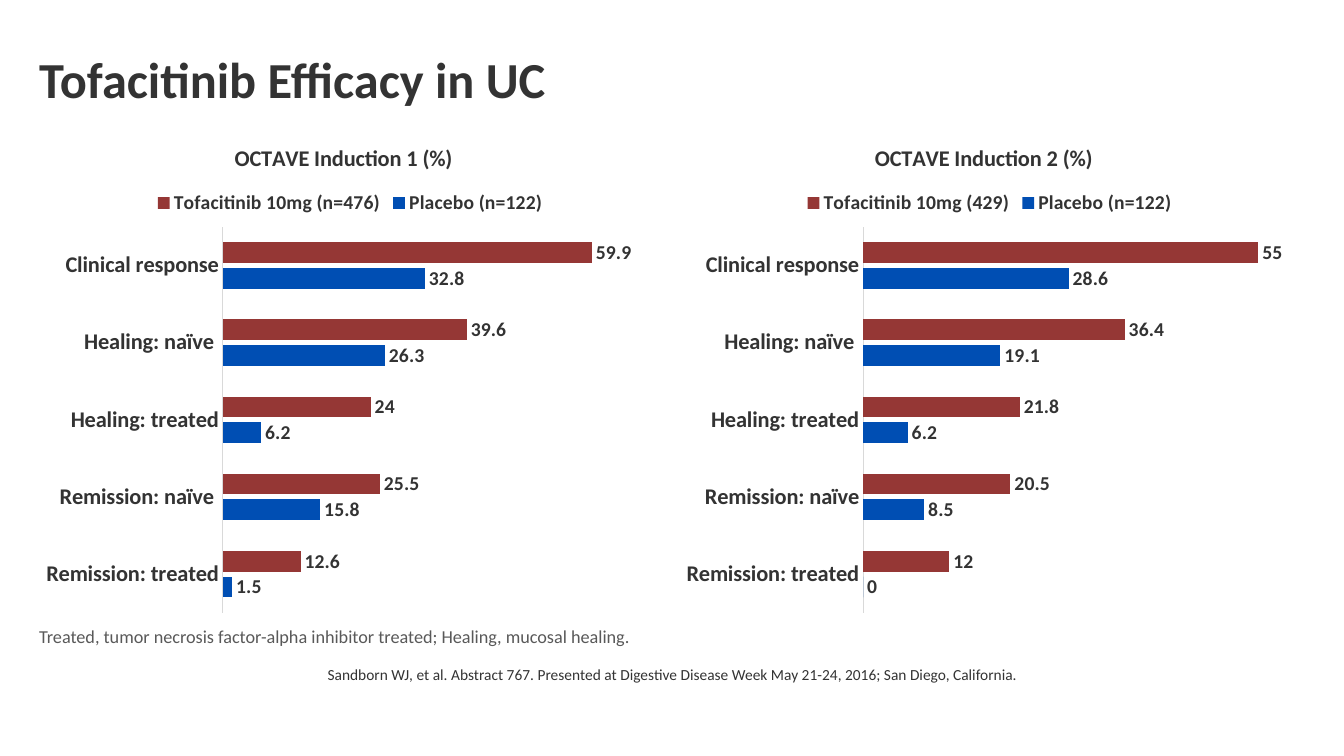
from pptx import Presentation
from pptx.chart.data import CategoryChartData
from pptx.dml.color import RGBColor
from pptx.enum.chart import XL_CHART_TYPE, XL_LABEL_POSITION, XL_LEGEND_POSITION, XL_TICK_MARK
from pptx.enum.text import MSO_ANCHOR
from pptx.oxml import parse_xml
from pptx.oxml.ns import nsdecls
from pptx.util import Inches, Pt

BAR_CLUSTERED = XL_CHART_TYPE.BAR_CLUSTERED
OUTSIDE_END = XL_LABEL_POSITION.OUTSIDE_END
LEGEND_TOP = XL_LEGEND_POSITION.TOP
NO_TICK = XL_TICK_MARK.NONE
TOP, MIDDLE = MSO_ANCHOR.TOP, MSO_ANCHOR.MIDDLE

FONT = "Calibri"
COLORS = {
    "ink": "333333",
    "note": "595959",
    "axis": "D9D9D9",
    "placebo": "004EB3",
    "tofacitinib": "953735",
}
MARGIN, CONTENT_WIDTH = 0.29, 12.78
CHART_LEFT, CHART_TOP, CHART_STEP = 0.34, 1.18, 6.35
CHART_WIDTH, CHART_HEIGHT = 6.28, 5

TRIALS = [
    {
        "title": "OCTAVE Induction 1 (%)",
        "outcomes": ["Remission: treated", "Remission: naïve ", "Healing: treated",
                     "Healing: naïve ", "Clinical response"],
        "arms": [
            ("placebo", "Placebo (n=122)", [1.5, 15.8, 6.2, 26.3, 32.8]),
            ("tofacitinib", "Tofacitinib 10mg (n=476)", [12.6, 25.5, 24, 39.6, 59.9]),
        ],
        "maximum": 70,
        "legend_left": 0.185,
    },
    {
        "title": "OCTAVE Induction 2 (%)",
        "outcomes": ["Remission: treated", "Remission: naïve", "Healing: treated",
                     "Healing: naïve ", "Clinical response"],
        "arms": [
            ("placebo", "Placebo (n=122)", [0, 8.5, 6.2, 19.1, 28.6]),
            ("tofacitinib", "Tofacitinib 10mg (429)", [12, 20.5, 21.8, 36.4, 55]),
        ],
        "maximum": 60,
        "legend_left": 0.2,
    },
]


def rgb(role):
    return RGBColor.from_string(COLORS[role])


def style_font(font, size, role="ink", bold=True):
    font.name = FONT
    font.size = Pt(size)
    font.bold = bold
    font.color.rgb = rgb(role)


def add_text(slide, box, words, size, role="ink", bold=False, anchor=TOP):
    frame = slide.shapes.add_textbox(*map(Inches, box)).text_frame
    frame.word_wrap = True
    frame.vertical_anchor = anchor
    paragraph = frame.paragraphs[0]
    paragraph.line_spacing = 0.9
    run = paragraph.add_run()
    run.text = words
    style_font(run.font, size, role, bold)


def place_part(chart, tag, index, **shares):
    part = chart.element.xpath(f".//c:{tag}")[0]
    for old_layout in part.xpath("./c:layout"):
        part.remove(old_layout)
    target = '<c:layoutTarget val="inner"/>' if tag == "plotArea" else ""
    modes = '<c:xMode val="edge"/><c:yMode val="edge"/>'
    values = "".join(f'<c:{key} val="{share}"/>' for key, share in shares.items())
    part.insert(index, parse_xml(
        f'<c:layout {nsdecls("c")}><c:manualLayout>{target}{modes}{values}'
        "</c:manualLayout></c:layout>"))


def style_axes(chart, maximum):
    outcome_axis = chart.category_axis
    outcome_axis.major_tick_mark = NO_TICK
    outcome_axis.minor_tick_mark = NO_TICK
    outcome_axis.format.line.color.rgb = rgb("axis")
    outcome_axis.format.line.width = Pt(0.75)
    style_font(outcome_axis.tick_labels.font, 16)
    percent_axis = chart.value_axis
    percent_axis.minimum_scale = 0
    percent_axis.maximum_scale = maximum
    percent_axis.has_major_gridlines = False
    percent_axis.visible = False


def style_arm(arm, role):
    arm.format.fill.solid()
    arm.format.fill.fore_color.rgb = rgb(role)
    arm.invert_if_negative = False
    labels = arm.data_labels
    labels.show_value = True
    labels.position = OUTSIDE_END
    style_font(labels.font, 14)


def add_trial(slide, column, trial):
    data = CategoryChartData()
    data.categories = trial["outcomes"]
    for _, name, percents in trial["arms"]:
        data.add_series(name, percents)
    box = (CHART_LEFT + column * CHART_STEP, CHART_TOP, CHART_WIDTH, CHART_HEIGHT)
    chart = slide.shapes.add_chart(BAR_CLUSTERED, *map(Inches, box), data).chart
    style_font(chart.font, 14)

    chart.has_title = True
    heading = chart.chart_title.text_frame.paragraphs[0].add_run()
    heading.text = trial["title"]
    style_font(heading.font, 16)

    chart.has_legend = True
    chart.legend.position = LEGEND_TOP
    chart.legend.include_in_layout = False
    style_font(chart.legend.font, 14)

    style_axes(chart, trial["maximum"])
    bars = chart.plots[0]
    bars.vary_by_categories = False
    bars.gap_width = 150
    bars.overlap = -25
    for arm, (role, _, _) in zip(bars.series, trial["arms"]):
        style_arm(arm, role)

    place_part(chart, "title", 1, x=0.31, y=0.04)
    place_part(chart, "legend", 1, x=trial["legend_left"], y=0.135)
    place_part(chart, "plotArea", 0, x=0.298, y=0.214, w=0.681, h=0.766)


def main():
    deck = Presentation()
    deck.slide_width, deck.slide_height = Inches(13.33), Inches(7.5)
    slide = deck.slides.add_slide(deck.slide_layouts[6])
    add_text(slide, (MARGIN, 0.19, CONTENT_WIDTH, 1.25), "Tofacitinib Efficacy in UC",
             36, bold=True, anchor=MIDDLE)
    add_text(slide, (3.15, 6.57, 9.92, 0.8),
             "Sandborn WJ, et al. Abstract 767. Presented at Digestive Disease Week "
             "May 21-24, 2016; San Diego, California.", 11)
    add_text(slide, (MARGIN, 6.18, CONTENT_WIDTH, 0.3),
             "Treated, tumor necrosis factor-alpha inhibitor treated; "
             "Healing, mucosal healing.", 13, "note")
    for column, trial in enumerate(TRIALS):
        add_trial(slide, column, trial)
    deck.save("out.pptx")


if __name__ == "__main__":
    main()
